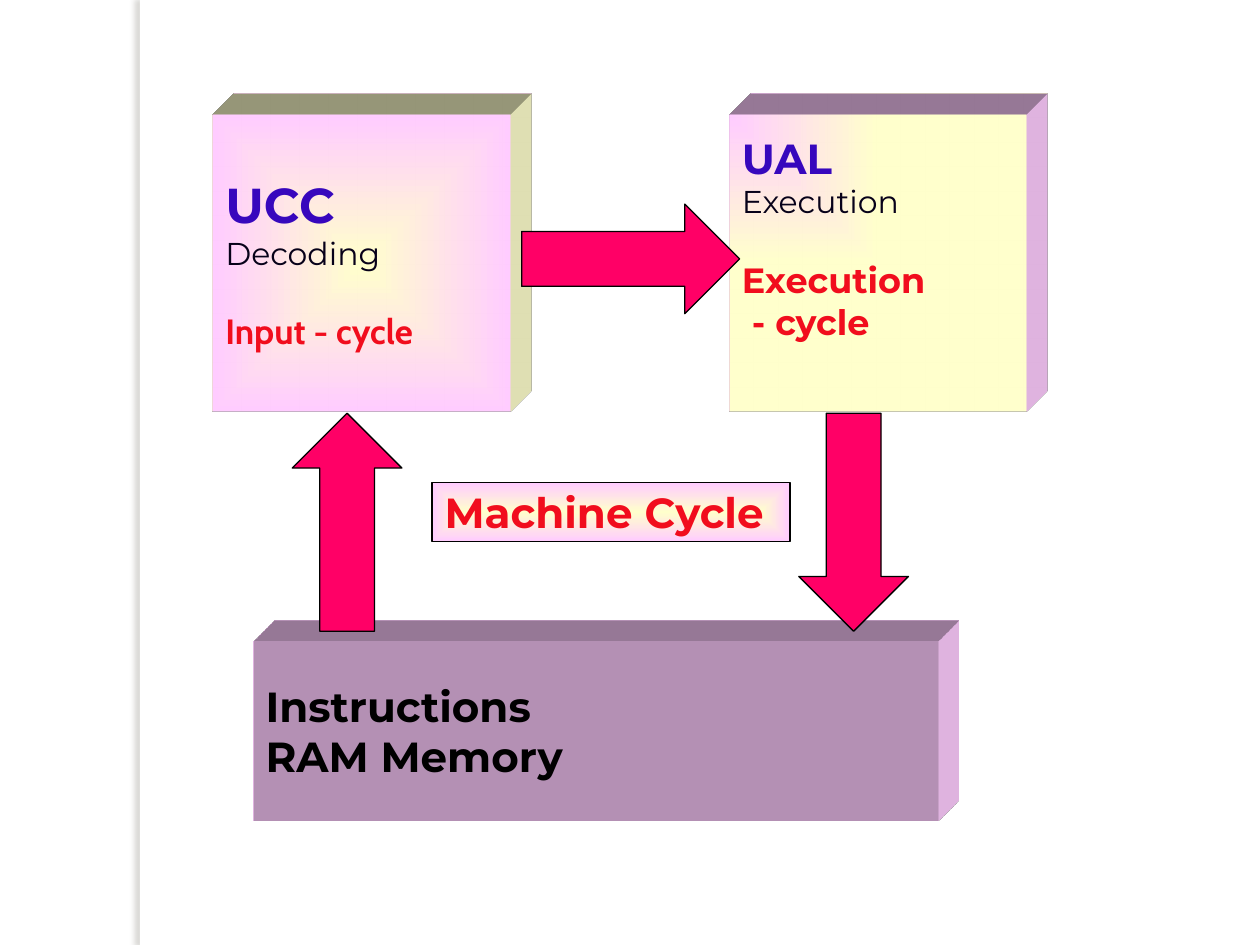
from lxml.etree import fromstring
from pptx import Presentation
from pptx.dml.color import RGBColor
from pptx.enum.shapes import MSO_SHAPE as Shape
from pptx.enum.text import MSO_ANCHOR, PP_ALIGN
from pptx.util import Inches, Pt

WIDTH, HEIGHT = 10, 7.5
COLORS = {
    "white": "FFFFFF", "black": "000000", "shade": "736F63",
    "cream": "FFFFCC", "pink": "FFCCFF", "arrow": "FF0066",
    "title": "3707BD", "body": "070119", "cycle": "F10D1D",
}
MAIN, ACCENT = "Montserrat", "Cabin"
GAP = 22  # points between a unit's role and its cycle
BOX, BOX_TOP = 2.36, 0.91
ARROW_WIDTH, ARROW_LENGTH, ARROW_TOP = 0.87, 1.73, 3.28
CENTER, CORNER = (50, 50, 50, 50), (0, 0, 100, 100)

# Lines: text, size, font, color, bold, space before
UCC = [("UCC", 28, MAIN, "title", True, 0),
       ("Decoding", 18, MAIN, "body", False, 0),
       ("Input - cycle", 20, ACCENT, "cycle", True, GAP)]
UAL = [("UAL", 24, MAIN, "title", True, 0),
       ("Execution", 18, MAIN, "body", False, 0),
       ("Execution", 20, MAIN, "cycle", True, GAP),
       (" - cycle", 20, MAIN, "cycle", True, 0)]
MEMORY = [("Instructions", 24, MAIN, "black", True, 0),
          ("RAM Memory", 24, MAIN, "black", True, 0)]
CAPTION = [("Machine Cycle", 24, MAIN, "cycle", True, 0)]

# Boxes: place, lines, fill (color or gradient), depth color, bottom inset
BOXES = [
    ((1.69, BOX_TOP, BOX, BOX), UCC, ("cream", "pink", "shape", CENTER), "cream", 0.05),
    ((5.79, BOX_TOP, BOX, BOX), UAL, ("pink", "cream", "rect", CORNER), "pink", 0.46),
    ((2.01, 5.09, 5.43, 1.42), MEMORY, "pink", "pink", 0.05),
]
CAPTION_BOX = ((3.43, 3.83, 2.84, 0.47), CAPTION,
               ("cream", "pink", "shape", CENTER), None, 0.05)
# Arrows: left, top, rotation
ARROWS = [(2.32, ARROW_TOP, 0), (6.34, ARROW_TOP, 180), (4.57, 1.19, 90)]

NS = 'xmlns:a="http://schemas.openxmlformats.org/drawingml/2006/main"'


def rgb(name):
    return RGBColor.from_string(COLORS[name])


def add_shape(slide, kind, place, color, outlined=False):
    shape = slide.shapes.add_shape(kind, *(Inches(n) for n in place))
    shape.shadow.inherit = False
    shape.fill.solid()
    shape.fill.fore_color.rgb = rgb(color)
    if outlined:
        shape.line.color.rgb = rgb("black")
        shape.line.width = Pt(0.75)
    else:
        shape.line.fill.background()
    return shape


def set_gradient(shape, first, last, path_kind, focus):
    left, top, right, bottom = (n * 1000 for n in focus)
    gradient = fromstring(
        f'<a:gradFill {NS} rotWithShape="1"><a:gsLst>'
        f'<a:gs pos="0"><a:srgbClr val="{COLORS[first]}"/></a:gs>'
        f'<a:gs pos="100000"><a:srgbClr val="{COLORS[last]}"/></a:gs></a:gsLst>'
        f'<a:path path="{path_kind}"><a:fillToRect l="{left}" t="{top}" '
        f'r="{right}" b="{bottom}"/></a:path></a:gradFill>')
    properties = shape.element.spPr
    properties.replace(properties.find("{*}solidFill"), gradient)


def set_depth(shape, color):
    scene = ('<a:scene3d {}><a:camera prst="legacyObliqueTopRight"/>'
             '<a:lightRig rig="legacyFlat3" dir="b"/></a:scene3d>')
    solid = ('<a:sp3d {} extrusionH="430200" prstMaterial="legacyMatte">'
             '<a:bevelT w="13500" h="13500" prst="angle"/>'
             '<a:bevelB w="13500" h="13500" prst="angle"/>'
             f'<a:extrusionClr><a:srgbClr val="{COLORS[color]}"/></a:extrusionClr></a:sp3d>')
    for part in (scene, solid):
        shape.element.spPr.append(fromstring(part.format(NS)))


def write_lines(shape, lines, bottom_inset):
    frame = shape.text_frame
    frame.word_wrap = True
    frame.vertical_anchor = MSO_ANCHOR.MIDDLE
    frame.margin_bottom = Inches(bottom_inset)
    frame.text = "\n".join(line[0] for line in lines)
    for paragraph, (_, size, font, color, bold, before) in zip(frame.paragraphs, lines):
        paragraph.alignment = PP_ALIGN.LEFT
        paragraph.space_before = Pt(before)
        style = paragraph.runs[0].font
        style.size, style.name, style.bold = Pt(size), font, bold
        style.color.rgb = rgb(color)


def add_box(slide, place, lines, fill, depth, bottom_inset):
    color = fill if isinstance(fill, str) else fill[0]
    shape = add_shape(slide, Shape.RECTANGLE, place, color, outlined=depth is None)
    if color != fill:
        set_gradient(shape, *fill)
    if depth:
        set_depth(shape, depth)
    write_lines(shape, lines, bottom_inset)


def add_side_strip(slide):
    strip = add_shape(slide, Shape.RECTANGLE, (1.11, 0, 0.08, HEIGHT), "white")
    strip.element.spPr.find("{*}effectLst").append(fromstring(
        f'<a:outerShdw {NS} blurRad="{Pt(3)}" dist="{Pt(3)}" dir="10800000" algn="tl" '
        f'rotWithShape="0"><a:srgbClr val="{COLORS["shade"]}">'
        '<a:alpha val="25000"/></a:srgbClr></a:outerShdw>'))


def main():
    presentation = Presentation()
    presentation.slide_width, presentation.slide_height = Inches(WIDTH), Inches(HEIGHT)
    slide = presentation.slides.add_slide(presentation.slide_layouts[6])

    # Side strip and the three units
    add_side_strip(slide)
    for box in BOXES:
        add_box(slide, *box)

    # Arrows of the cycle
    for left, top, rotation in ARROWS:
        arrow = add_shape(slide, Shape.UP_ARROW,
                          (left, top, ARROW_WIDTH, ARROW_LENGTH), "arrow", outlined=True)
        arrow.rotation = rotation

    # Caption in the middle
    add_box(slide, *CAPTION_BOX)
    presentation.save("out.pptx")


if __name__ == "__main__":
    main()
